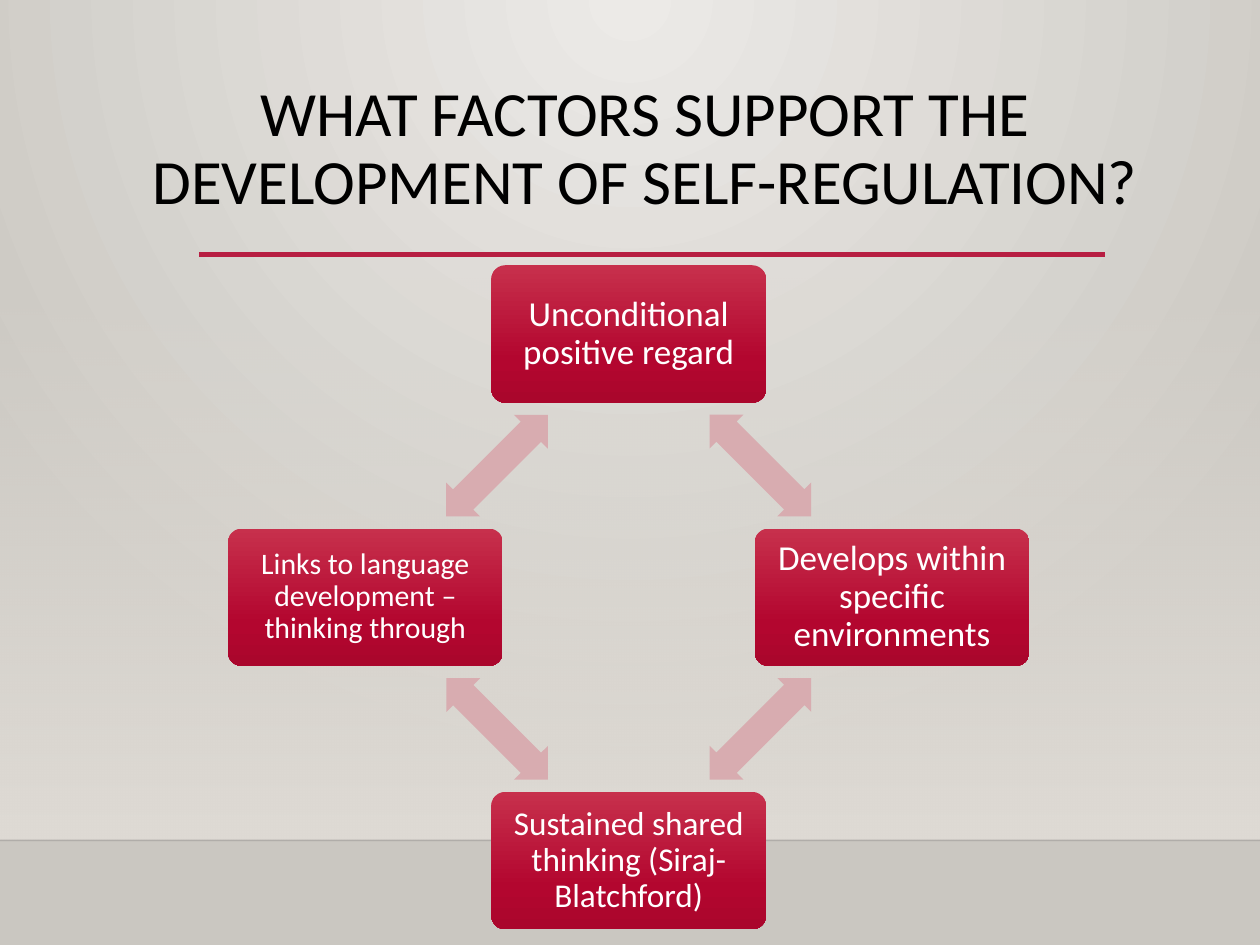
import math

import pptx
import pptx.dml.color
import pptx.enum.shapes
import pptx.enum.text
import pptx.oxml.ns
import pptx.oxml.xmlchemy
import pptx.util
from lxml import etree

Inches = pptx.util.Inches
Pt = pptx.util.Pt
qn = pptx.oxml.ns.qn
SHAPES = pptx.enum.shapes.MSO_SHAPE

WIDTH, HEIGHT = 10, 7.5
FONT = "Calibri"
FLOOR = 6.67
CENTRE_X, CENTRE_Y, RADIUS = 4.99, 4.74, 2.09
NODE_W, NODE_H = 2.18, 1.09
ARROW_W, ARROW_H = 1.14, 0.38
# Clockwise from the top: label, text size, inset
FACTORS = [
    ("Unconditional positive regard", 20, 0.08),
    ("Develops within specific environments", 20, 0.08),
    ("Sustained shared thinking (Siraj-Blatchford)", 19, 0.08),
    ("Links to language development – thinking through", 17, 0.07),
]
NODE_STOPS = [(0, "C7304C", 100), (69, "B3062F", 100), (100, "AA062C", 100)]


def rgb(hex_colour):
    return pptx.dml.color.RGBColor.from_string(hex_colour)


def add_alpha(colour_element, percent):
    etree.SubElement(colour_element, qn("a:alpha"), val=str(percent * 1000))


def set_gradient(fill, owner, stops, from_top_centre=False):
    """Fill with (position, colour, opacity) stops, downwards or radially."""
    fill.gradient()
    gradient = owner.element.find(".//" + qn("a:gradFill"))
    for child in list(gradient):
        gradient.remove(child)
    stop_list = etree.SubElement(gradient, qn("a:gsLst"))
    for position, colour, opacity in stops:
        stop = etree.SubElement(stop_list, qn("a:gs"), pos=str(position * 1000))
        colour_element = etree.SubElement(stop, qn("a:srgbClr"), val=colour)
        if opacity < 100:
            add_alpha(colour_element, opacity)
    if from_top_centre:
        radial = etree.SubElement(gradient, qn("a:path"))
        radial.set("path", "circle")
        etree.SubElement(radial, qn("a:fillToRect"), l="43000", t="0", r="43000", b="100000")
    else:
        etree.SubElement(gradient, qn("a:lin"), ang="5400000", scaled="0")


def style_text(frame, text, size, colour):
    frame.word_wrap = True
    frame.text = text
    paragraph = frame.paragraphs[0]
    paragraph.alignment = pptx.enum.text.PP_ALIGN.CENTER
    paragraph.line_spacing = 0.9
    font = paragraph.runs[0].font
    font.name, font.size = FONT, Pt(size)
    font.color.rgb = rgb(colour)


def add_plain_shape(slide, kind, centre_x, centre_y, width, height):
    shape = slide.shapes.add_shape(
        kind, Inches(centre_x - width / 2), Inches(centre_y - height / 2),
        Inches(width), Inches(height))
    shape.shadow.inherit = False
    shape.line.fill.background()
    return shape


def add_rule(slide, left, right, y, colour, weight, opacity=100):
    rule = slide.shapes.add_connector(
        pptx.enum.shapes.MSO_CONNECTOR.STRAIGHT,
        Inches(left), Inches(y), Inches(right), Inches(y))
    rule.line.color.rgb = rgb(colour)
    rule.line.width = Pt(weight)
    if opacity < 100:
        add_alpha(rule.element.find(".//" + qn("a:srgbClr")), opacity)
    etree.SubElement(rule.element.spPr, qn("a:effectLst"))


def add_backdrop(slide):
    set_gradient(slide.background.fill, slide,
                 [(0, "ECEAE7", 100), (100, "CAC7C1", 100)], from_top_centre=True)
    wall_top = 2.2
    wall = add_plain_shape(slide, SHAPES.RECTANGLE, WIDTH / 2,
                           (wall_top + FLOOR) / 2, WIDTH, FLOOR - wall_top)
    set_gradient(wall.fill, wall, [(0, "DFDBD5", 0), (100, "DFDBD5", 100)])
    add_rule(slide, 0, WIDTH, FLOOR, "000001", 1, opacity=20)


def set_title(slide, text):
    title = slide.shapes.title
    title.left, title.top = Inches(0.67), Inches(0.6)
    title.width, title.height = Inches(8.9), Inches(1.34)
    style_text(title.text_frame, text, 36, "000000")
    title.text_frame.vertical_anchor = pptx.enum.text.MSO_ANCHOR.TOP
    add_rule(slide, 1.58, 8.77, 2.02, "B71E42", 2.5)


def add_factor(slide, x, y, label, size, inset):
    node = add_plain_shape(slide, SHAPES.ROUNDED_RECTANGLE, x, y, NODE_W, NODE_H)
    node.adjustments[0] = 0.1
    set_gradient(node.fill, node, NODE_STOPS)
    frame = node.text_frame
    frame.margin_left = frame.margin_right = Inches(inset)
    frame.margin_top = frame.margin_bottom = Inches(inset)
    frame.vertical_anchor = pptx.enum.text.MSO_ANCHOR.MIDDLE
    style_text(frame, label, size, "FFFFFF")


def add_link(slide, x, y, rotation):
    link = add_plain_shape(slide, SHAPES.LEFT_RIGHT_ARROW, x, y, ARROW_W, ARROW_H)
    link.adjustments[0], link.adjustments[1] = 0.6, 0.5
    link.rotation = rotation
    link.fill.solid()
    link.fill.fore_color.rgb = rgb("D8ACB0")


def cycle_point(step):
    """Place on the cycle, a quarter turn clockwise from the top per step."""
    angle = step * math.pi / 2
    return CENTRE_X + RADIUS * math.sin(angle), CENTRE_Y - RADIUS * math.cos(angle)


def add_cycle(slide):
    for step, factor in enumerate(FACTORS):
        x, y = cycle_point(step)
        next_x, next_y = cycle_point(step + 1)
        add_factor(slide, x, y, *factor)
        add_link(slide, (x + next_x) / 2, (y + next_y) / 2, 45 + 90 * step)


def main():
    presentation = pptx.Presentation()
    presentation.slide_width = Inches(WIDTH)
    presentation.slide_height = Inches(HEIGHT)
    slide = presentation.slides.add_slide(presentation.slide_layouts[5])
    add_backdrop(slide)
    set_title(slide, "WHAT FACTORS SUPPORT THE DEVELOPMENT OF SELF-REGULATION?")
    add_cycle(slide)
    presentation.save("out.pptx")


if __name__ == "__main__":
    main()
